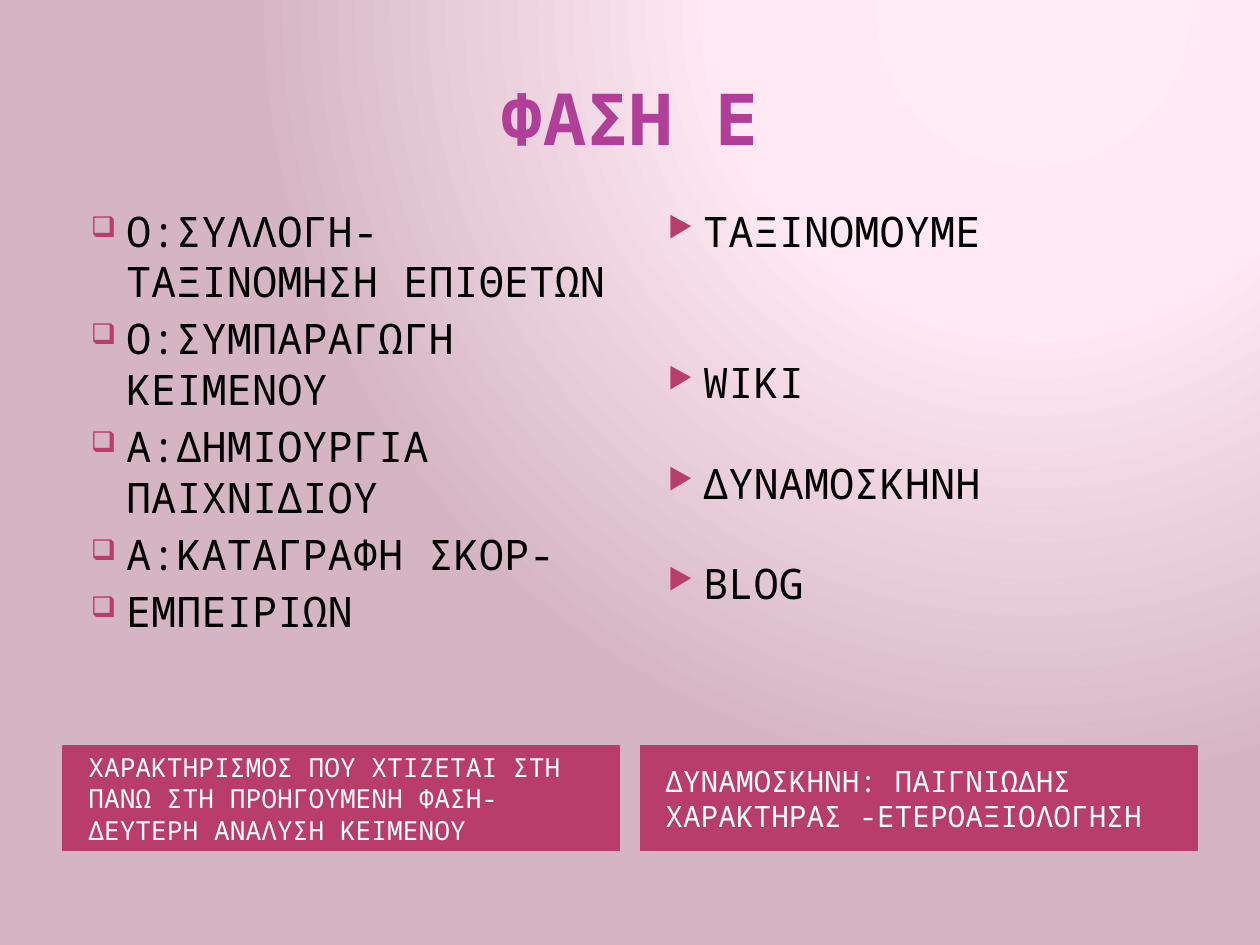
from dataclasses import dataclass

from lxml import etree
from pptx import Presentation
from pptx.dml.color import RGBColor
from pptx.enum.shapes import MSO_SHAPE
from pptx.enum.text import MSO_ANCHOR, MSO_AUTO_SIZE, PP_ALIGN
from pptx.oxml import parse_xml
from pptx.oxml.ns import qn
from pptx.util import Cm, Pt

RECTANGLE = MSO_SHAPE.RECTANGLE
MIDDLE, TOP = MSO_ANCHOR.MIDDLE, MSO_ANCHOR.TOP
LEFT, CENTER = PP_ALIGN.LEFT, PP_ALIGN.CENTER
NO_AUTOFIT = MSO_AUTO_SIZE.NONE
TITLE_ONLY = 5


@dataclass(frozen=True)
class Theme:
    font: str = "Noto Sans Mono"
    title_color: str = "B13F9A"
    accent: str = "B83D68"
    text: str = "000000"
    banner_text: str = "FFFFFF"
    gradient: tuple[tuple[int, str], ...] = ((0, "FFECF5"), (40, "FFE9F3"), (100, "D5B5C4"))
    title_size: float = 41
    body_size: float = 24
    item_gap: float = 4
    line_height: float = 28.8  # one line of body text


@dataclass(frozen=True)
class Item:
    text: str
    space_before: float = 0


@dataclass(frozen=True)
class Column:
    bullet: str
    items: tuple[Item, ...]
    banner: str
    banner_size: float


THEME = Theme()
MARGIN, GUTTER = 1.27, 0.41
SLIDE_WIDTH, SLIDE_HEIGHT = 25.4, 19.05
CONTENT_WIDTH = SLIDE_WIDTH - 2 * MARGIN
COLUMN_WIDTH = (CONTENT_WIDTH - GUTTER) / 2

COLUMNS = (
    Column(
        "❑",
        (
            Item("Ο:ΣΥΛΛΟΓΗ-ΤΑΞΙΝΟΜΗΣΗ ΕΠΙΘΕΤΩΝ"),
            Item("O:ΣΥΜΠΑΡΑΓΩΓΗ ΚΕΙΜΕΝΟΥ", THEME.item_gap),
            Item("Α:ΔΗΜΙΟΥΡΓΙΑ ΠΑΙΧΝΙΔΙΟΥ", THEME.item_gap),
            Item("Α:ΚΑΤΑΓΡΑΦΗ ΣΚΟΡ-", THEME.item_gap),
            Item("ΕΜΠΕΙΡΙΩΝ", THEME.item_gap),
        ),
        "ΧΑΡΑΚΤΗΡΙΣΜΟΣ ΠΟΥ ΧΤΙΖΕΤΑΙ ΣΤΗ ΠΑΝΩ ΣΤΗ ΠΡΟΗΓΟΥΜΕΝΗ ΦΑΣΗ- ΔΕΥΤΕΡΗ ΑΝΑΛΥΣΗ ΚΕΙΜΕΝΟΥ",
        15,
    ),
    Column(
        "▶",
        (
            Item("ΤΑΞΙΝΟΜΟΥΜΕ"),
            Item("WIKI", 2 * THEME.line_height),
            Item("ΔΥΝΑΜΟΣΚΗΝΗ", THEME.line_height),
            Item("BLOG", THEME.line_height),
        ),
        "ΔΥΝΑΜΟΣΚΗΝΗ: ΠΑΙΓΝΙΩΔΗΣ ΧΑΡΑΚΤΗΡΑΣ -ΕΤΕΡΟΑΞΙΟΛΟΓΗΣΗ",
        16.8,
    ),
)


def format_runs(paragraph, size: float, color: str, bold: bool = False) -> None:
    for run in paragraph.runs:
        run.font.name = THEME.font
        run.font.size = Pt(size)
        run.font.bold = bold
        run.font.color.rgb = RGBColor.from_string(color)


def prepare_frame(text_frame, anchor) -> None:
    text_frame.word_wrap = True
    text_frame.auto_size = NO_AUTOFIT
    text_frame.vertical_anchor = anchor


def add_bullet(paragraph, character: str) -> None:
    properties = paragraph._p.get_or_add_pPr()
    properties.set("marL", str(Cm(1.02)))
    properties.set("indent", str(-Cm(0.71)))
    color = etree.SubElement(properties, qn("a:buClr"))
    etree.SubElement(color, qn("a:srgbClr"), val=THEME.accent)
    etree.SubElement(properties, qn("a:buSzPct"), val="68000")
    etree.SubElement(properties, qn("a:buChar"), char=character)


def paint_background(slide) -> None:
    slide.background.fill.solid()
    solid = next(slide.element.iter(qn("a:solidFill")))
    stops = "".join(
        f'<a:gs pos="{position * 1000}"><a:srgbClr val="{color}"/></a:gs>'
        for position, color in THEME.gradient
    )
    gradient = parse_xml(
        '<a:gradFill xmlns:a="http://schemas.openxmlformats.org/drawingml/2006/main">'
        f'<a:gsLst>{stops}</a:gsLst><a:path path="circle">'
        '<a:fillToRect l="65000" t="0" r="0" b="98000"/></a:path></a:gradFill>'
    )
    solid.getparent().replace(solid, gradient)


def set_title(slide, text: str) -> None:
    title = slide.shapes.title
    title.left, title.top = Cm(MARGIN), Cm(0.76)
    title.width, title.height = Cm(CONTENT_WIDTH), Cm(3.18)
    title.text_frame.text = text
    prepare_frame(title.text_frame, MIDDLE)
    paragraph = title.text_frame.paragraphs[0]
    paragraph.alignment = CENTER
    format_runs(paragraph, THEME.title_size, THEME.title_color, bold=True)


def add_banner(slide, column: Column, left: float) -> None:
    banner = slide.shapes.add_shape(RECTANGLE, Cm(left), Cm(15.04), Cm(COLUMN_WIDTH), Cm(2.11))
    banner.shadow.inherit = False
    banner.fill.solid()
    banner.fill.fore_color.rgb = RGBColor.from_string(THEME.accent)
    banner.line.color.rgb = RGBColor.from_string(THEME.accent)
    banner.line.width = Pt(0.75)
    text_frame = banner.text_frame
    text_frame.text = column.banner
    prepare_frame(text_frame, MIDDLE)
    text_frame.margin_left = Cm(0.51)
    paragraph = text_frame.paragraphs[0]
    paragraph.alignment = LEFT
    format_runs(paragraph, column.banner_size, THEME.banner_text)


def add_list(slide, column: Column, left: float) -> None:
    box = slide.shapes.add_textbox(Cm(left), Cm(4.01), Cm(COLUMN_WIDTH), Cm(10.95))
    text_frame = box.text_frame
    text_frame.text = "\n".join(item.text for item in column.items)
    prepare_frame(text_frame, TOP)
    for paragraph, item in zip(text_frame.paragraphs, column.items):
        add_bullet(paragraph, column.bullet)
        paragraph.space_before = Pt(item.space_before)
        format_runs(paragraph, THEME.body_size, THEME.text)


def main() -> None:
    presentation = Presentation()
    presentation.slide_width = Cm(SLIDE_WIDTH)
    presentation.slide_height = Cm(SLIDE_HEIGHT)
    slide = presentation.slides.add_slide(presentation.slide_layouts[TITLE_ONLY])

    paint_background(slide)
    set_title(slide, "ΦΑΣΗ Ε")

    # Each column is a bulleted list above a banner
    for index, column in enumerate(COLUMNS):
        left = MARGIN + index * (COLUMN_WIDTH + GUTTER)
        add_banner(slide, column, left)
        add_list(slide, column, left)

    presentation.save("out.pptx")


if __name__ == "__main__":
    main()
